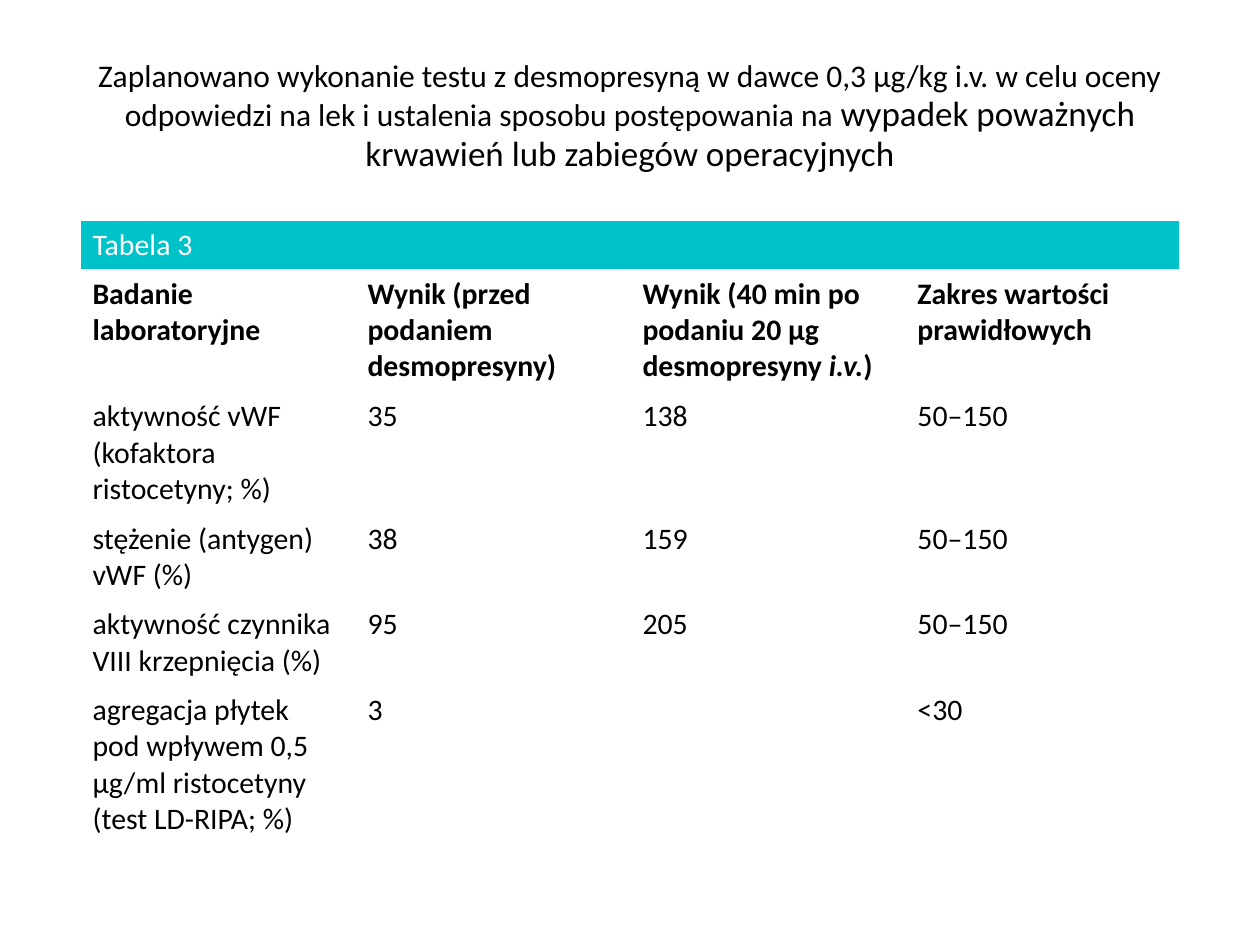
import pptx
import pptx.dml.color
import pptx.enum.text
import pptx.util

Pt = pptx.util.Pt
FONT = "Calibri"
BLACK, WHITE, TEAL = "000000", "FFFFFF", "00C2C9"

TITLE = [
    ("Zaplanowano wykonanie testu z desmopresyną w dawce 0,3 µg/kg i.v. w celu oceny "
     "odpowiedzi na lek i ustalenia sposobu postępowania na ", 18),
    ("wypadek poważnych krwawień lub zabiegów operacyjnych", 20),
]
CAPTION = "Tabela 3"
HEADINGS = [
    [("Badanie laboratoryjne", False)],
    [("Wynik (przed podaniem desmopresyny)", False)],
    [("Wynik (40 min po podaniu 20 µg desmopresyny\u00a0", False), ("i.v.", True), (")", False)],
    [("Zakres wartości prawidłowych", False)],
]
RESULTS = [
    ("aktywność vWF (kofaktora ristocetyny; %)", "35", "138", "50–150"),
    ("stężenie (antygen) vWF (%)", "38", "159", "50–150"),
    ("aktywność czynnika VIII krzepnięcia (%)", "95", "205", "50–150"),
    ("agregacja płytek pod wpływem 0,5 µg/ml ristocetyny (test LD-RIPA; %)", "3", "", "<30"),
]
COLUMN_WIDTH = 157.15
ROW_HEIGHTS = [28, 70, 70, 49, 49, 90.5]


def rgb(color):
    return pptx.dml.color.RGBColor.from_string(color)


def add_run(p, text, size, color=BLACK, bold=False, italic=False):
    r = p.add_run()
    r.text = text
    r.font.name, r.font.size = FONT, Pt(size)
    r.font.bold, r.font.italic = bold, italic
    r.font.color.rgb = rgb(color)


def add_title(slide):
    sp = slide.shapes.title
    sp.left, sp.top, sp.width, sp.height = Pt(36), Pt(21.6), Pt(648), Pt(90)
    tf = sp.text_frame
    tf.word_wrap = True
    tf.vertical_anchor = pptx.enum.text.MSO_ANCHOR.MIDDLE
    p = tf.paragraphs[0]
    p.alignment = pptx.enum.text.PP_ALIGN.CENTER
    p.line_spacing = 0.96
    for text, size in TITLE:
        add_run(p, text, size)


def fill_cell(cell, runs, fill=WHITE, color=BLACK, bold=False):
    """Fill a cell with (text, italic) runs."""
    cell.fill.solid()
    cell.fill.fore_color.rgb = rgb(fill)
    cell.margin_left = cell.margin_right = Pt(7.2)
    cell.margin_top = cell.margin_bottom = Pt(3.6)
    p = cell.text_frame.paragraphs[0]
    p.font.size = Pt(17)
    for text, italic in runs:
        if text:
            add_run(p, text, 17, color, bold, italic)


def add_results_table(slide):
    columns = len(HEADINGS)
    frame = slide.shapes.add_table(len(ROW_HEIGHTS), columns, Pt(45.7), Pt(126),
                                   Pt(COLUMN_WIDTH * columns), Pt(sum(ROW_HEIGHTS)))
    table = frame.table
    table.horz_banding = False
    for column in table.columns:
        column.width = Pt(COLUMN_WIDTH)
    for row, height in zip(table.rows, ROW_HEIGHTS):
        row.height = Pt(height)

    caption = table.cell(0, 0)
    caption.merge(table.cell(0, columns - 1))
    fill_cell(caption, [(CAPTION, False)], TEAL, WHITE)
    caption.vertical_anchor = pptx.enum.text.MSO_ANCHOR.MIDDLE

    for j, runs in enumerate(HEADINGS):
        fill_cell(table.cell(1, j), runs, bold=True)
    for i, result in enumerate(RESULTS, start=2):
        for j, text in enumerate(result):
            fill_cell(table.cell(i, j), [(text, False)])


def main():
    prs = pptx.Presentation()
    prs.slide_width, prs.slide_height = Pt(720), Pt(540)
    slide = prs.slides.add_slide(prs.slide_layouts[5])
    add_title(slide)
    add_results_table(slide)
    prs.save("out.pptx")


if __name__ == "__main__":
    main()
